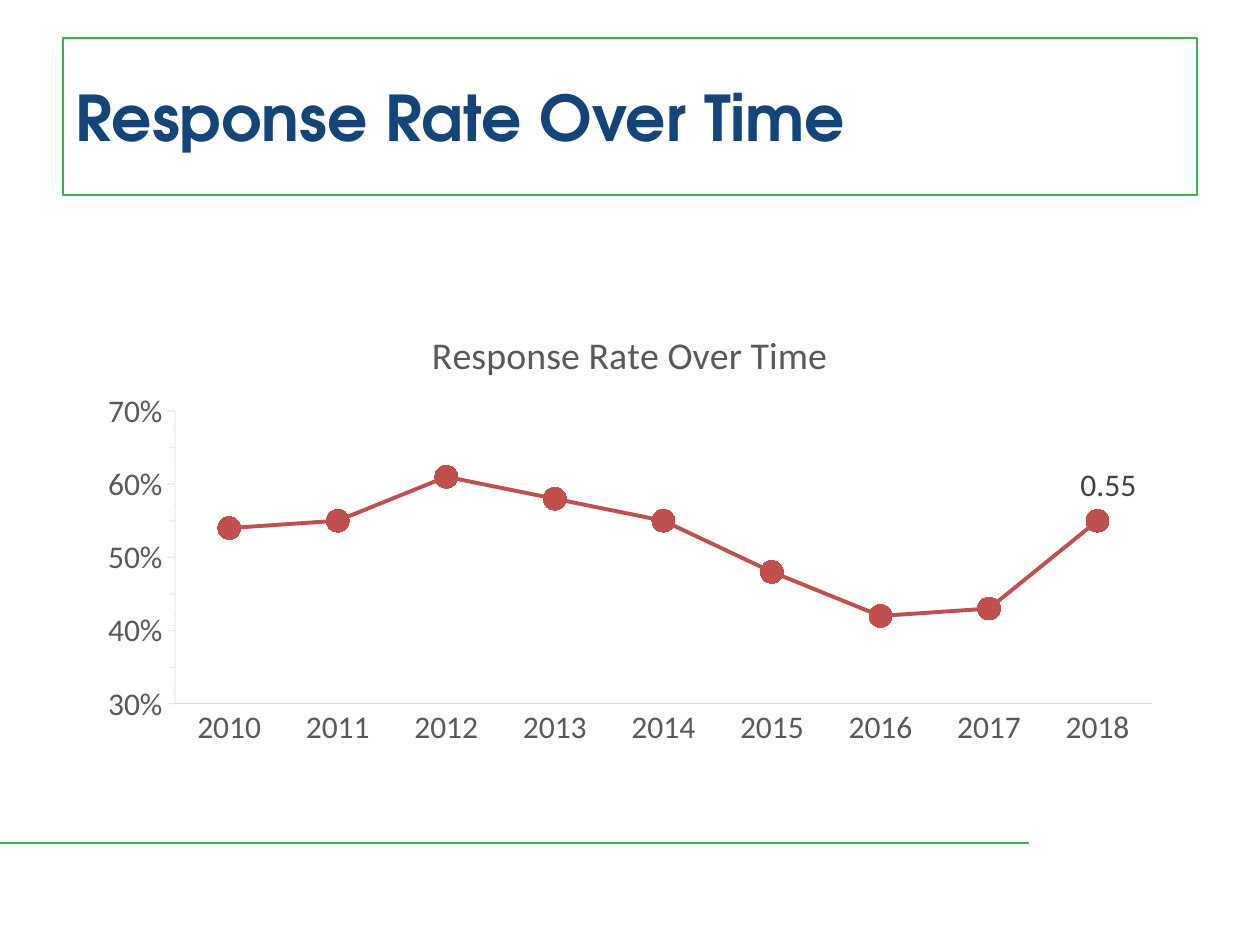
from lxml import etree
from pptx import Presentation
from pptx import util as u
from pptx.chart.data import CategoryChartData
from pptx.dml.color import RGBColor
from pptx.enum import chart as charts, dml, shapes, text
from pptx.oxml.ns import qn

TITLE = "Response Rate Over Time"
RATES = {
    "2010": 0.54, "2011": 0.55, "2012": 0.61, "2013": 0.58, "2014": 0.55,
    "2015": 0.48, "2016": 0.42, "2017": 0.43, "2018": 0.55,
}
COLORS = {
    "green": "39B54A", "navy": "154578", "white": "FFFFFF", "red": "C0504D",
    "gray": "595959", "dark": "404040", "pale": "D9D9D9", "axis": "A6A6A6",
}
TITLE_BOX = (63, 38, 1134, 157)
CHART_BOX = (87, 306, 1086, 450)
PLOT_BOX = (175, 411, 977, 293)
FOOTER_LINE = (0, 843, 1029, 843)
LABEL_SHIFT = 11
PX = 914400 // 126


def px(lengths):
    return [u.Emu(length * PX) for length in lengths]


def color(name):
    return RGBColor.from_string(COLORS[name])


def set_line(line, name, width):
    line.color.rgb = color(name)
    line.width = u.Pt(width)


def set_font(font, family, size, name, bold=False):
    font.name, font.size, font.bold = family, u.Pt(size), bold
    font.color.rgb = color(name)


def manual_layout(**settings):
    layout = etree.Element(qn("c:layout"))
    manual = etree.SubElement(layout, qn("c:manualLayout"))
    for tag, value in settings.items():
        etree.SubElement(manual, qn("c:" + tag)).set("val", str(value))
    return layout


def add_footer_line(slide):
    line = slide.shapes.add_connector(shapes.MSO_CONNECTOR.STRAIGHT, *px(FOOTER_LINE))
    set_line(line.line, "green", 1.5)
    etree.SubElement(line._element.spPr, qn("a:effectLst"))


def add_title(slide):
    box = slide.shapes.add_shape(shapes.MSO_SHAPE.RECTANGLE, *px(TITLE_BOX))
    box.shadow.inherit = False
    box.fill.solid()
    box.fill.fore_color.rgb = color("white")
    set_line(box.line, "green", 1)
    frame = box.text_frame
    frame.vertical_anchor = text.MSO_ANCHOR.MIDDLE
    paragraph = frame.paragraphs[0]
    paragraph.text = TITLE
    paragraph.alignment = text.PP_ALIGN.LEFT
    set_font(paragraph.font, "TeX Gyre Adventor", 36, "navy", True)


def format_axes(chart):
    years, rates = chart.category_axis, chart.value_axis
    for axis in (years, rates):
        axis.has_major_gridlines = False
        set_font(axis.tick_labels.font, "Calibri", 18, "gray")
    years.major_tick_mark = charts.XL_TICK_MARK.NONE
    set_line(years.format.line, "pale", 0.75)
    rates.minimum_scale, rates.maximum_scale = 0.3, 0.7
    rates.major_unit, rates.minor_unit = 0.1, 0.05
    rates.major_tick_mark = rates.minor_tick_mark = charts.XL_TICK_MARK.OUTSIDE
    rates.tick_labels.number_format = "0%"
    rates.tick_labels.number_format_is_linked = False
    line = rates.format.line
    set_line(line, "axis", 0.75)
    line.dash_style = dml.MSO_LINE.ROUND_DOT
    for fill in rates._element.spPr.iter(qn("a:srgbClr")):
        etree.SubElement(fill, qn("a:alpha")).set("val", "40000")


def format_series(series):
    series.smooth = False
    set_line(series.format.line, "red", 2.25)
    marker = series.marker
    marker.style, marker.size = charts.XL_MARKER_STYLE.CIRCLE, 13
    marker.format.fill.solid()
    marker.format.fill.fore_color.rgb = color("red")
    set_line(marker.format.line, "white", 0.75)
    last = len(RATES) - 1
    label = series.points[last].data_label
    set_font(label.font, "Calibri", 18, "dark")
    label.position = charts.XL_LABEL_POSITION.ABOVE
    index = series._element.find(".//" + qn("c:dLbl") + "/" + qn("c:idx"))
    index.addnext(manual_layout(x=round(LABEL_SHIFT / CHART_BOX[2], 2), y=0))


def add_rate_chart(slide):
    data = CategoryChartData()
    data.categories = list(RATES)
    data.add_series("Series 1", list(RATES.values()))
    frame = slide.shapes.add_chart(
        charts.XL_CHART_TYPE.LINE_MARKERS, *px(CHART_BOX), data)
    chart = frame.chart
    set_font(chart.font, "Calibri", 18, "gray")
    chart.has_legend = False
    chart.has_title = True
    chart.chart_title.include_in_layout = False
    paragraph = chart.chart_title.text_frame.paragraphs[0]
    paragraph.text = TITLE
    set_font(paragraph.font, "Calibri", 21.6, "gray")
    chart.plots[0].vary_by_categories = False
    format_axes(chart)
    format_series(chart.plots[0].series[0])
    left, top, width, height = CHART_BOX
    plot_left, plot_top, plot_width, plot_height = PLOT_BOX
    area = chart._chartSpace.find(".//" + qn("c:plotArea"))
    for layout in area.findall(qn("c:layout")):
        area.remove(layout)
    area.insert(0, manual_layout(
        layoutTarget="inner", xMode="edge", yMode="edge",
        x=(plot_left - left) / width, y=(plot_top - top) / height,
        w=plot_width / width, h=plot_height / height))


def main():
    presentation = Presentation()
    presentation.slide_width, presentation.slide_height = px((1260, 945))
    slide = presentation.slides.add_slide(presentation.slide_layouts[6])
    add_footer_line(slide)
    add_title(slide)
    add_rate_chart(slide)
    presentation.save("out.pptx")


if __name__ == "__main__":
    main()
